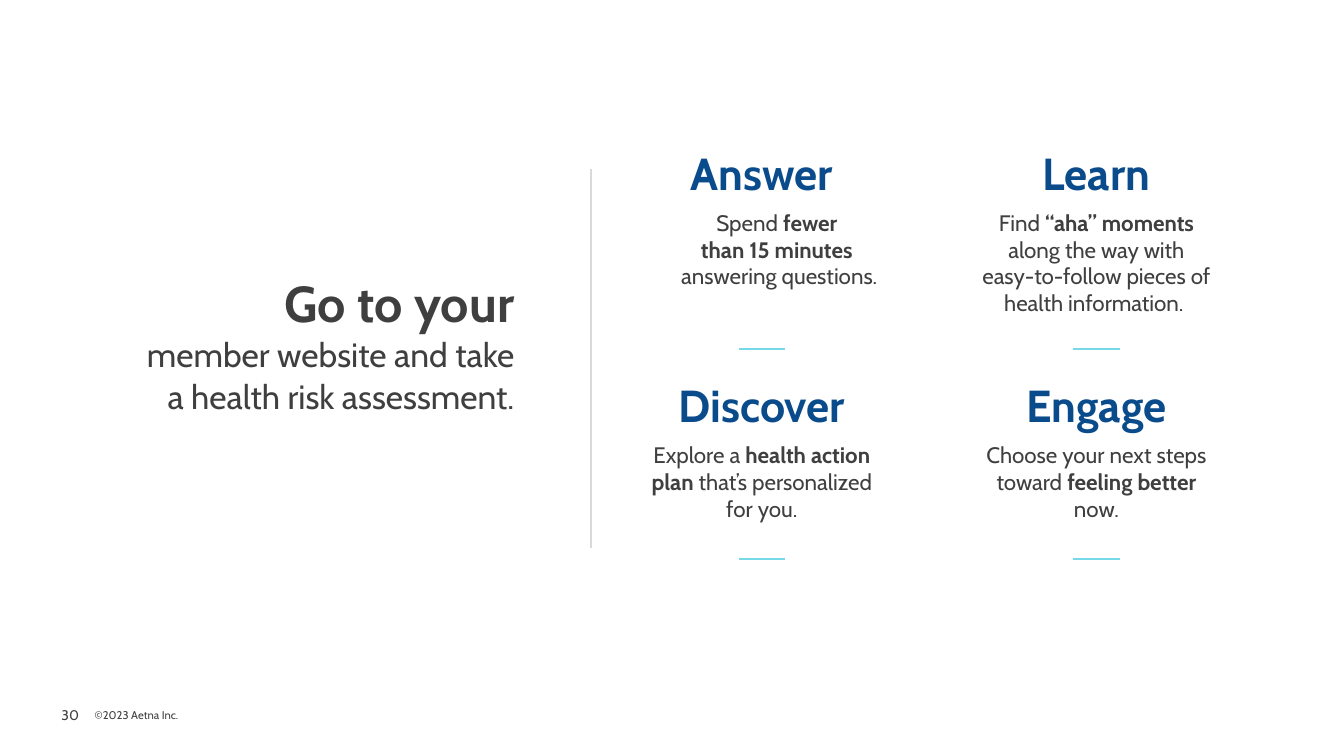
from dataclasses import dataclass

from lxml.etree import SubElement
from pptx import Presentation
from pptx.dml.color import RGBColor
from pptx.enum.shapes import MSO_CONNECTOR as Connector
from pptx.enum.text import MSO_ANCHOR as Anchor, PP_ALIGN as Align
from pptx.oxml.ns import qn
from pptx.util import Pt


@dataclass(frozen=True)
class Theme:
    font: str = "Cabin"
    text: str = "3F3F3F"
    heading: str = "0A4B8C"
    accent: str = "77D8E8"
    divider: str = "D9D9D9"
    lead_size: float = 36
    heading_size: float = 32
    sublead_size: float = 24
    body_size: float = 16
    number_size: float = 10
    copyright_size: float = 8


THEME = Theme()

# Grid of the four steps
FIRST_CENTER, COLUMN_PITCH = 544.2, 239
ROW_TOPS = (104, 270)
RULE_TOPS = (249.5, 399.6)
HEADING_WIDTH, HEADING_HEIGHT = 126, 43.2
BODY_OFFSET, BODY_HEIGHT = 45.2, 37.4
RULE_WIDTH = 33.2

# Heading, (text, bold) runs, body width, body shift from the column center
STEPS = (
    ("Answer", (("Spend ", False), ("fewer \nthan 15 minutes \n", True),
                ("answering questions.", False)), 165.6, 12.5),
    ("Learn", (("Find ", False), ("“aha” moments ", True),
               ("along the way with easy-to-follow pieces of health information. ", False)),
     165.6, 0),
    ("Discover", (("Explore a ", False), ("health action plan ", True),
                  ("that’s personalized for you.", False)), 165.6, 0),
    ("Engage", (("Choose your next steps toward ", False), ("feeling better", True),
                (" now.", False)), 172.8, 0),
)


def apply_format(target, values):
    for name, value in values.items():
        setattr(target, name, value)


def add_text(slide, box, runs, color=THEME.text, anchor=Anchor.TOP,
             inset=(0, 0), **paragraph_format):
    """Add a one-paragraph text box; runs are (text, size, bold)."""
    shape = slide.shapes.add_textbox(*map(Pt, box))
    across, down = map(Pt, inset)
    frame = shape.text_frame
    apply_format(frame, {
        "word_wrap": True, "vertical_anchor": anchor,
        "margin_left": across, "margin_right": across,
        "margin_top": down, "margin_bottom": down,
    })
    paragraph = frame.paragraphs[0]
    apply_format(paragraph, paragraph_format)
    for text, size, bold in runs:
        for index, line in enumerate(text.split("\n")):
            if index:
                paragraph.add_line_break()
            if line:
                run = paragraph.add_run()
                run.text = line
                apply_format(run.font, {"name": THEME.font, "size": Pt(size), "bold": bold})
                run.font.color.rgb = RGBColor.from_string(color)


def add_rule(slide, start, end, color, width):
    rule = slide.shapes.add_connector(Connector.STRAIGHT, *map(Pt, start + end))
    rule.line.color.rgb = RGBColor.from_string(color)
    rule.line.width = Pt(width)
    SubElement(rule._element.spPr, qn("a:effectLst"))


def add_step(slide, index, heading, parts, body_width, shift):
    row, column = divmod(index, 2)
    center = FIRST_CENTER + column * COLUMN_PITCH
    top = ROW_TOPS[row]
    add_text(slide, (center - HEADING_WIDTH / 2, top, HEADING_WIDTH, HEADING_HEIGHT),
             [(heading, THEME.heading_size, True)], color=THEME.heading,
             anchor=Anchor.MIDDLE, inset=(0, 3.6),
             alignment=Align.CENTER, line_spacing=0.9)
    add_text(slide, (center + shift - body_width / 2, top + BODY_OFFSET, body_width, BODY_HEIGHT),
             [(text, THEME.body_size, bold) for text, bold in parts],
             alignment=Align.CENTER)
    rule_top = RULE_TOPS[row]
    add_rule(slide, (center - RULE_WIDTH / 2, rule_top), (center + RULE_WIDTH / 2, rule_top),
             THEME.accent, 1.5)


def main():
    presentation = Presentation()
    apply_format(presentation, {"slide_width": Pt(960), "slide_height": Pt(540)})
    slide = presentation.slides.add_slide(presentation.slide_layouts[6])

    # Footer
    add_text(slide, (43.9, 501.5, 28.1, 18), [("30", THEME.number_size, False)],
             anchor=Anchor.MIDDLE, inset=(0, 3.6))
    add_text(slide, (67.7, 506.2, 633.6, 9.4),
             [("©2023 Aetna Inc.", THEME.copyright_size, False)], anchor=Anchor.BOTTOM)

    # Lead message and divider
    add_text(slide, (45, 0, 329.5, 504.7),
             [("Go to your\n", THEME.lead_size, True),
              ("member website and take\na health risk assessment.", THEME.sublead_size, False)],
             anchor=Anchor.MIDDLE, inset=(7.2, 3.6),
             alignment=Align.RIGHT, line_spacing=Pt(30))
    add_rule(slide, (422.2, 121), (422.2, 391.7), THEME.divider, 2)

    # Steps
    for index, step in enumerate(STEPS):
        add_step(slide, index, *step)

    presentation.save("out.pptx")


if __name__ == "__main__":
    main()
